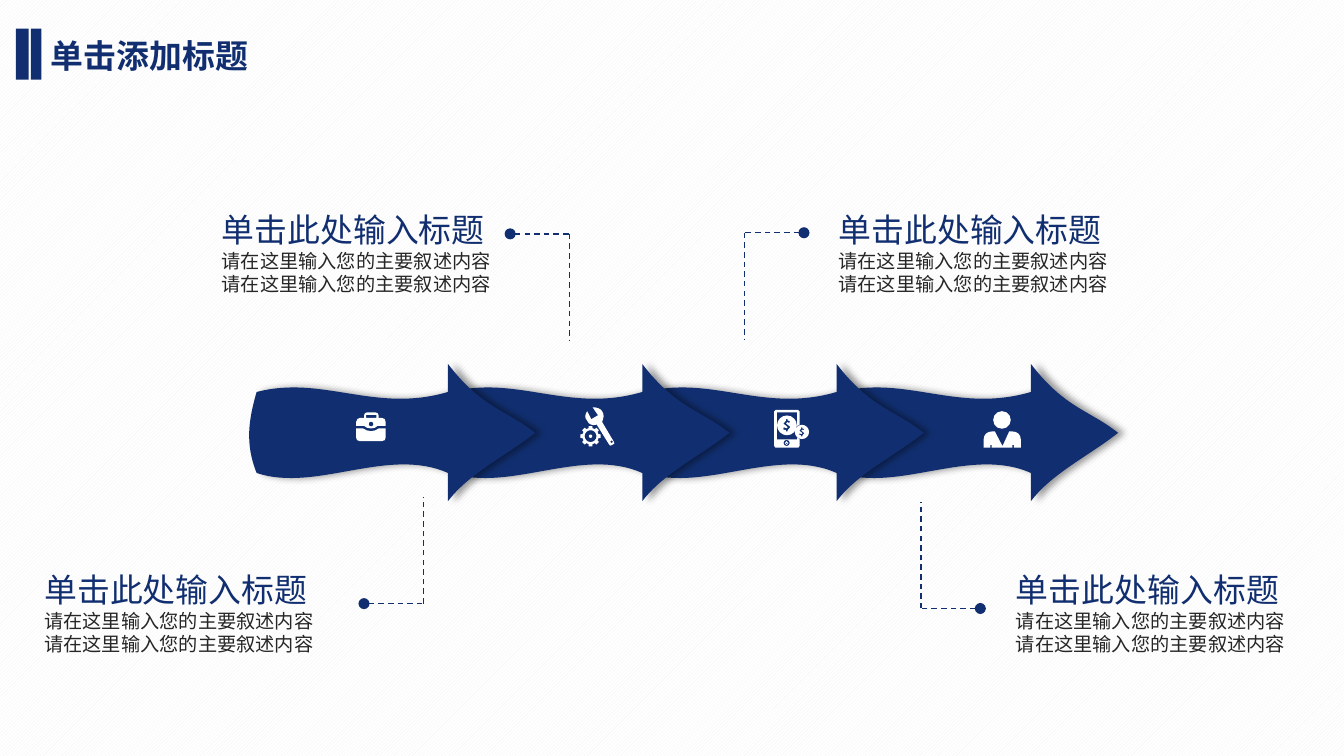
from math import cos, radians, sin
from typing import NamedTuple

from lxml import etree
from pptx import Presentation
from pptx.dml.color import RGBColor
from pptx.enum import dml, shapes, text
from pptx.oxml.ns import qn
from pptx.util import Pt

HUES = {"navy": "112F70", "white": "FFFFFF", "ink": "262626",
        "stripe": "F2F2F2", "shade": "000000"}
FONT = "Noto Sans CJK SC"
HEAD = "单击此处输入标题"
BODY = "请在这里输入您的主要叙述内容"
STEP = 104.1          # distance from one arrow to the next
ARM, DROP = 31.8, 57  # lengths of the two parts of a leader


class Note(NamedTuple):
    """A text block and its leader; side and rise are directions from the dot."""
    left: float
    top: float
    dot: tuple
    side: int
    rise: int


NOTES = [
    Note(111.6, 108.7, (273.3, 125.3), 1, 1),
    Note(16.6, 301.7, (195, 323.4), 1, -1),
    Note(442.1, 108.7, (430.7, 124.7), -1, 1),
    Note(537.1, 301.7, (525.2, 326), -1, -1),
]

# Outlines: two numbers are a corner, six numbers a Bezier curve.
ARROW = [(4.2, 15), (39.8, 5.8, 67.5, 26.6, 106.7, 15), (106.7, 0),
         (125, 23.8, 137.7, 24.5, 153.4, 36.9),
         (137.7, 49.3, 118, 58.5, 106.7, 73.5), (106.7, 58.4),
         (74.5, 44, 36, 69, 4.2, 58.4), (-2.2, 42.5, 0, 29.5, 4.2, 15)]
LID = [(190.8, 228.2), (190.8, 226.1), (190.8, 224.8, 191.8, 223.9, 193, 223.9),
       (195.1, 223.9), (195.1, 222.5), (195.1, 221.6, 195.7, 221, 196.6, 221),
       (201.2, 221), (202.2, 221, 202.8, 221.6, 202.8, 222.5), (202.8, 223.9),
       (204.6, 223.9), (205.8, 223.9, 206.6, 224.8, 206.6, 226.1),
       (206.6, 228.2), (202.3, 228.2), (200.9, 230, 196.6, 230, 195.1, 228.2)]
GRIP = [(196.2, 222.3), (201.7, 222.3), (201.7, 223.9), (196.2, 223.9)]
CASE = [(190.8, 229.5), (194.4, 229.5), (197, 231.5, 200.5, 231.5, 203, 229.5),
        (206.6, 229.5), (206.6, 234.5), (206.6, 235.6, 205.9, 236.3, 204.8, 236.3),
        (192.6, 236.3), (191.5, 236.3, 190.8, 235.6, 190.8, 234.5)]
WRENCH = [(329, 236.9), (322.6, 226.1), (323.3, 223.9, 324, 222.5, 322.6, 220.3),
          (321.8, 218.9, 319.7, 218.2, 317.5, 218.2), (320.4, 222.5),
          (316.8, 224.6), (314.6, 220.3), (313.2, 222.5, 313.2, 223.9, 314.6, 225.4),
          (315.4, 227.5, 317.5, 228.2, 319.7, 227.5), (326.2, 237.9),
          (326.5, 239, 327.2, 239, 328, 238.4), (329.3, 238, 329.3, 237.4, 329, 236.9)]
PHONE = [(427, 234.3), (427, 235.4), (416.2, 235.4), (416.2, 221), (427, 221),
         (427, 228.2), (428.4, 227.5), (428.4, 220.4),
         (428.4, 220, 428, 219.6, 427.6, 219.6), (415.5, 219.6),
         (415, 219.6, 414.7, 220, 414.7, 220.4), (414.7, 239),
         (414.7, 239.5, 415, 239.8, 415.5, 239.8), (427.6, 239.8),
         (428, 239.8, 428.4, 239.5, 428.4, 239), (428.4, 235.3)]
DOLLAR = [(.4, 2.6), (.4, 3.3), (-.5, 3.3), (-.5, 2.6), (-2, 2.2), (-1.7, 1),
          (-.3, 1.6), (.4, 1), (-.3, .3), (-1.9, -.9), (-.5, -2.6), (-.5, -3.3),
          (.4, -3.3), (.4, -2.6), (1.6, -2.3), (1.3, -1.2), (.2, -1.7),
          (-.4, -1.1), (.2, -.5), (1.9, .9)]
SUIT = [(530.6, 239.8), (530.6, 238.3), (531.3, 238.3), (531.3, 239.8),
        (542.4, 239.8), (542.4, 238.3), (543.2, 238.3), (543.2, 239.8),
        (546.9, 239.8), (546.9, 235.4), (546.9, 232.8, 545, 231.1, 542.2, 231.1),
        (540.7, 231.1), (537.1, 239), (533, 231.1), (531.6, 231.1),
        (528.9, 231.1, 527, 232.8, 527, 235.4), (527, 239.8)]


def tint(name: str) -> RGBColor:
    return RGBColor.from_string(HUES[name])


def move(outline: list, x: float, y: float, size: float = 1) -> list:
    return [tuple(v * size + (y if k % 2 else x) for k, v in enumerate(seg))
            for seg in outline]


def ring(x: float, y: float, rad: float) -> list:
    k = .55
    unit = [(1, 0), (1, k, k, 1, 0, 1), (-k, 1, -1, k, -1, 0),
            (-1, -k, -k, -1, 0, -1), (k, -1, 1, -k, 1, 0)]
    return move(unit, x, y, rad)


def cog(x: float, y: float, out: float, root: float) -> list:
    return [(x + r * cos(radians(a + d)), y + r * sin(radians(a + d)))
            for a in range(0, 360, 45)
            for d, r in ((-14, root), (-10, out), (10, out), (14, root))]


def paint(shape, hue: str) -> None:
    shape.shadow.inherit = False
    shape.fill.solid()
    shape.fill.fore_color.rgb = tint(hue)
    shape.line.fill.background()


def block(holder, kind, *area: float, hue: str = "white") -> None:
    paint(holder.shapes.add_shape(kind, *map(Pt, area)), hue)


def bend(shape, loops: tuple) -> None:
    """Join each run of three lines that stands for a curve into a Bezier."""
    lines = iter(list(shape._element.iter(qn("a:lnTo"))))
    for loop in loops:
        for seg in loop[1:]:
            first = next(lines)
            if len(seg) == 6:
                first.tag = qn("a:cubicBezTo")
                for _ in range(2):
                    spare = next(lines)
                    first.append(spare[0])
                    spare.getparent().remove(spare)


def draw(group, *loops: list, hue: str = "white"):
    """Draw one outline; the loops after the first cut holes."""
    pen = None
    for loop in loops:
        pts = [(Pt(seg[k]), Pt(seg[k + 1])) for seg in loop
               for k in range(0, len(seg), 2)]
        if pen is None:
            pen = group.shapes.build_freeform(*pts[0])
        else:
            pen.move_to(*pts[0])
        pen.add_line_segments(pts[1:], close=False)
    shape = pen.convert_to_shape()
    bend(shape, loops)
    paint(shape, hue)
    return shape


def bag(group) -> None:
    draw(group, CASE)
    draw(group, LID, GRIP + GRIP[:1], ring(198.8, 227.2, 1.3))


def tools(group) -> None:
    draw(group, WRENCH, ring(327.7, 236.7, .8))
    draw(group, cog(316.4, 233.7, 5.5, 4.4), ring(316.4, 233.7, 3.2))
    block(group, shapes.MSO_SHAPE.OVAL, 315.5, 232.8, 1.8, 1.8)


def phone(group) -> None:
    draw(group, ring(421.4, 237.4, 1), ring(421.4, 237.4, .6))
    block(group, shapes.MSO_SHAPE.RECTANGLE, 421.2, 236.4, .4, 1)
    draw(group, PHONE, ring(421.4, 237.3, 1.7))
    for x, y, size in ((421.6, 227.9, 1), (429.6, 231.4, .72)):
        draw(group, ring(x, y, 5.3 * size), move(DOLLAR + DOLLAR[:1], x, y, size))


def man(group) -> None:
    block(group, shapes.MSO_SHAPE.OVAL, 532.1, 220.3, 9.4, 9.4)
    draw(group, SUIT)


def arrow(slide, n: int, icon) -> None:
    group = slide.shapes.add_group_shape()
    shape = draw(group, move(ARROW, 133.3 + n * STEP, 195), hue="navy")
    glow = etree.SubElement(shape._element.spPr.find(qn("a:effectLst")),
                            qn("a:outerShdw"), blurRad=str(Pt(4)), dist=str(Pt(3)), dir="0")
    shade = etree.SubElement(glow, qn("a:srgbClr"), val=HUES["shade"])
    etree.SubElement(shade, qn("a:alpha"), val="40000")
    icon(group)


def dash(slide, start: tuple, end: tuple, dot: bool = False) -> None:
    line = slide.shapes.add_connector(shapes.MSO_CONNECTOR.STRAIGHT,
                                      *map(Pt, (*start, *end)))
    line.line.color.rgb = tint("navy")
    line.line.width = Pt(.75)
    line.line.dash_style = dml.MSO_LINE.DASH
    if dot:
        etree.SubElement(line.line._get_or_add_ln(), qn("a:headEnd"), type="oval")
    etree.SubElement(line._element.spPr, qn("a:effectLst"))


def style(para, size: float, hue: str, bold: bool = False) -> None:
    para.alignment = text.PP_ALIGN.LEFT
    font = para.font
    font.size, font.bold, font.name = Pt(size), bold, FONT
    font.color.rgb = tint(hue)
    etree.SubElement(para._p.pPr.find(qn("a:defRPr")), qn("a:ea"), typeface=FONT)


def note(slide, item: Note) -> None:
    x, y = item.dot
    turn = x + item.side * ARM
    dash(slide, item.dot, (turn, y), dot=True)
    dash(slide, (turn, y), (turn, y + item.rise * DROP))
    box = slide.shapes.add_textbox(*map(Pt, (item.left, item.top, 159, 82)))
    frame = box.text_frame
    frame.word_wrap = True
    frame.margin_right = 0
    frame.text = "\n".join((HEAD, BODY, BODY))
    looks = [(17.6, "navy", 21.2)] + [(10.3, "ink", 12.4)] * 2
    for para, (size, hue, pitch) in zip(frame.paragraphs, looks):
        style(para, size, hue)
        para.line_spacing = Pt(pitch)


def main() -> None:
    deck = Presentation()
    deck.slide_width, deck.slide_height = Pt(720), Pt(405)
    slide = deck.slides.add_slide(deck.slide_layouts[5])
    back = slide.background.fill
    back.patterned()
    back.pattern = dml.MSO_PATTERN.LIGHT_UPWARD_DIAGONAL
    back.fore_color.rgb, back.back_color.rgb = tint("stripe"), tint("white")

    title = slide.shapes.title
    title.left, title.top, title.width, title.height = map(Pt, (19.9, 15.1, 174, 28.8))
    title.text_frame.text = "单击添加标题"
    title.text_frame.vertical_anchor = text.MSO_ANCHOR.MIDDLE
    style(title.text_frame.paragraphs[0], 17.6, "navy", bold=True)
    for left, width in ((8.6, 6.8), (16.6, 5.6)):
        block(slide, shapes.MSO_SHAPE.RECTANGLE, left, 15.3, width, 27.4, hue="navy")

    icons = (bag, tools, phone, man)
    for n in reversed(range(len(icons))):
        arrow(slide, n, icons[n])
    for item in NOTES:
        note(slide, item)
    deck.save("out.pptx")


if __name__ == "__main__":
    main()
